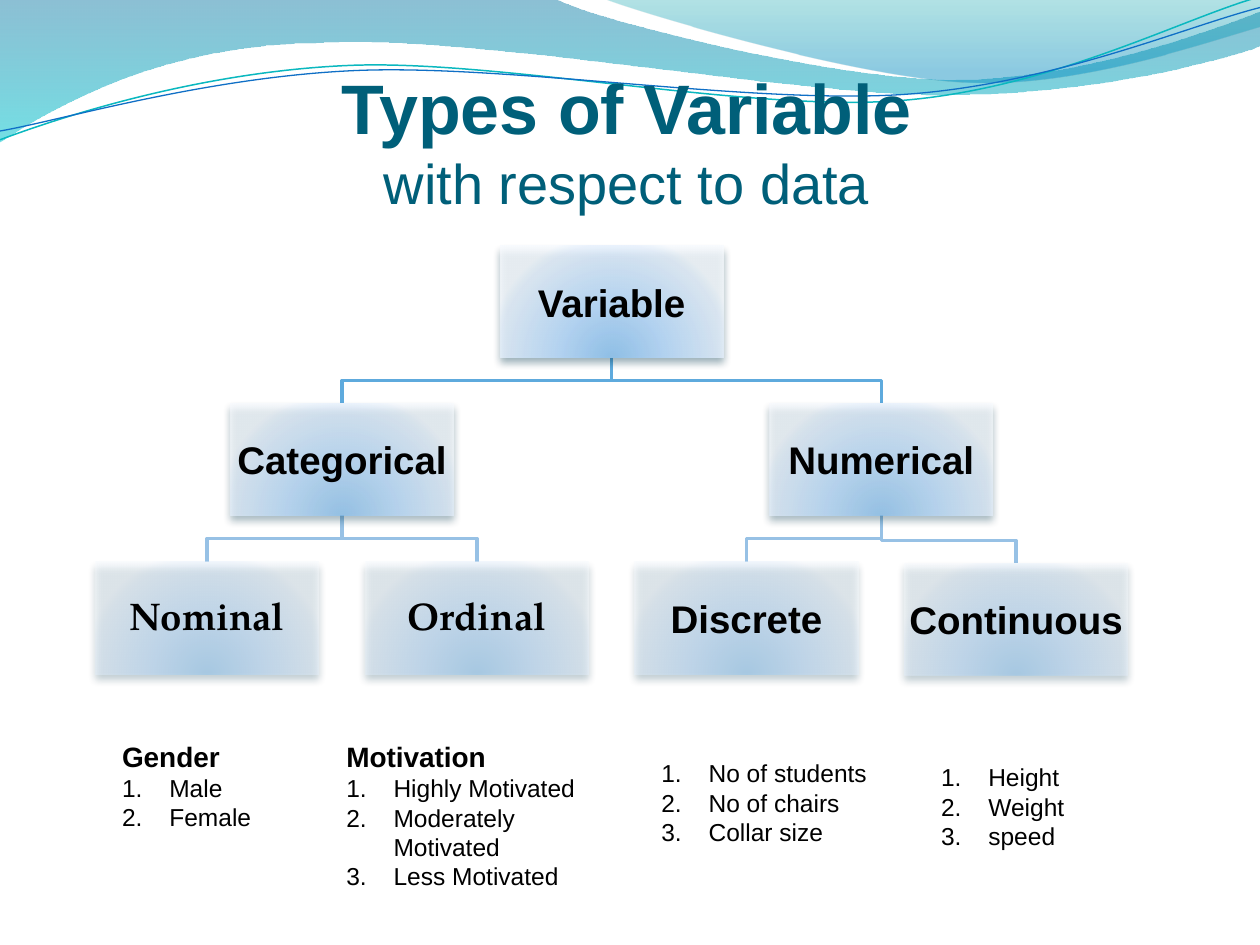
"""Build a slide showing the types of variable as a tree with examples."""
from typing import NamedTuple, Optional

from lxml.etree import Element, SubElement as Sub
from pptx import Presentation
from pptx.dml.color import RGBColor
from pptx.enum.shapes import MSO_SHAPE as SHAPE
from pptx.enum.text import MSO_ANCHOR as ANCHOR, MSO_AUTO_SIZE as AUTOSIZE, PP_ALIGN as ALIGN
from pptx.oxml.ns import qn
from pptx.util import Inches, Pt

BOX_W, BOX_H = 1.77, 0.89
COL_X, COL_STEP = 0.76, 2.14
ROW_Y = (1.95, 3.2, 4.46)
ROW_ALPHA = (80, 70, 50)
BRANCH_COLORS = ("", "5EAADD", "97C1E5")
BOX_STOPS = ((0, "8BC2F1"), (43, "B9DBFD"), (93, "EAF3FE"), (100, "F8FBFF"))
SERIF = "TeX Gyre Pagella"
INDENT = Inches(3 / 8)


class Wave(NamedTuple):
    start: tuple
    segments: list
    stops: tuple = ()
    line: str = ""
    width: float = 0


class Node(NamedTuple):
    text: str
    col: float
    row: int
    parent: Optional["Node"] = None
    font: str = "Arial"
    drop: float = 0


class Example(NamedTuple):
    box: tuple
    items: list
    heading: str = ""


WAVES = [
    Wave((0, -0.01), [(4.4, -0.01), (4.76, 0.17, 6.64, 0.63, 7.58, 0.63),
                      (8.53, 0.63, 9.58, 0.26, 10, 0.09), (10.01, 0.36),
                      (9.83, 0.44, 8.7, 0.76, 7.46, 0.75),
                      (6.22, 0.75, 3.82, 0.28, 2.57, 0.34),
                      (1.29, 0.35, 0.46, 0.83, -0.01, 1.13), (0, -0.01)],
         ((0, "0074A1", 45), (100, "00C6CF", 55))),
    Wave((4.79, -0.01), [(5.09, 0.11, 6.82, 0.62, 7.69, 0.65),
                         (8.56, 0.69, 9.61, 0.32, 10, 0.21), (10, 0), (4.79, -0.01)],
         ((0, "00A1A9", 30), (80, "008BBF", 45))),
    Wave((0, 1.11), [(0.48, 0.93, 1.58, 0.57, 2.77, 0.52), (3.95, 0.47, 5.93, 0.89, 7.13, 0.8),
                     (8.33, 0.71, 9.38, 0.15, 9.98, -0.02)], line="0AB8BF", width=0.85),
    Wave((0, 1.04), [(0.47, 0.96, 1.64, 0.61, 2.83, 0.56), (4.03, 0.51, 5.97, 0.83, 7.17, 0.75),
                     (8.36, 0.67, 9.41, 0.21, 10, 0.06)], line="0F6FC6", width=0.75),
]
ROOT = Node("Variable", 1.5, 0)
CATEGORICAL = Node("Categorical", 0.5, 1, ROOT)
NUMERICAL = Node("Numerical", 2.5, 1, ROOT)
NODES = [
    ROOT, CATEGORICAL, Node("Nominal", 0, 2, CATEGORICAL, SERIF),
    Node("Ordinal", 1, 2, CATEGORICAL, SERIF), NUMERICAL,
    Node("Discrete", 2, 2, NUMERICAL), Node("Continuous", 3, 2, NUMERICAL, drop=0.01),
]
EXAMPLES = [
    Example((0.87, 5.82, 1.49, 0.84), ["Male", "Female"], "Gender"),
    Example((2.65, 5.82, 2.26, 1.35),
            ["Highly Motivated", "Moderately Motivated", "Less Motivated"], "Motivation"),
    Example((5.15, 5.97, 2.01, 0.81), ["No of students", "No of chairs", "Collar size"]),
    Example((7.37, 6, 2.01, 1.04), ["Height", "Weight", "speed"]),
]


def set_all(target, **values) -> None:
    for name, value in values.items():
        setattr(target, name, value)


def add_run(p, text: str, size: float, bold=False, font="Arial", color="000000") -> None:
    r = p.add_run()
    r.text = text
    set_all(r.font, name=font, size=Pt(size), bold=bold)
    r.font.color.rgb = RGBColor.from_string(color)


def add_color(parent, color: str, alpha: int) -> None:
    Sub(Sub(parent, qn("a:srgbClr"), val=color), qn("a:alpha"), val=str(alpha * 1000))


def fill_gradient(sp, stops: tuple, radial=False) -> None:
    sp.fill.background()
    grad = Element(qn("a:gradFill"), rotWithShape="1")
    gs_list = Sub(grad, qn("a:gsLst"))
    for pos, color, alpha in stops:
        add_color(Sub(gs_list, qn("a:gs"), pos=str(pos * 1000)), color, alpha)
    if radial:
        Sub(Sub(grad, qn("a:path"), path="circle"), qn("a:fillToRect"),
            l="50000", t="130000", r="50000", b="-30000")
    else:
        Sub(grad, qn("a:lin"), ang="5400000", scaled="0")
    spPr = sp._element.spPr
    spPr.replace(spPr.find(qn("a:noFill")), grad)


def draw_wave(s, wave: Wave) -> None:
    points = [seg[i:i + 2] for seg in wave.segments for i in range(0, len(seg), 2)]
    builder = s.shapes.build_freeform(*map(Inches, wave.start))
    builder.add_line_segments([tuple(map(Inches, pt)) for pt in points], close=bool(wave.stops))
    sp = builder.convert_to_shape()
    outline = sp._element.spPr.find(".//" + qn("a:path"))
    steps = iter(outline.findall(qn("a:lnTo")))
    for seg in wave.segments:
        first, *others = [next(steps) for _ in range(len(seg) // 2)]
        if others:
            curve = Element(qn("a:cubicBezTo"))
            outline.replace(first, curve)
            curve.extend([step[0] for step in (first, *others)])
            for step in others:
                outline.remove(step)
    sp.shadow.inherit = False
    if wave.stops:
        fill_gradient(sp, wave.stops)
        sp.line.fill.background()
    else:
        sp.fill.background()
        sp.line.color.rgb = RGBColor.from_string(wave.line)
        sp.line.width = Pt(wave.width)


def corner(node: Node) -> tuple:
    return COL_X + COL_STEP * node.col, ROW_Y[node.row] + node.drop


def draw_branch(s, node: Node) -> None:
    (x1, y1), (x2, y2) = corner(node.parent), corner(node)
    x1, x2, y1 = x1 + BOX_W / 2, x2 + BOX_W / 2, y1 + BOX_H
    mid = (y1 + y2) / 2 + node.drop
    draw_wave(s, Wave((x1, y1), [(x1, mid), (x2, mid), (x2, y2)],
                      line=BRANCH_COLORS[node.row], width=2))


def draw_node(s, node: Node) -> None:
    box = [Inches(v) for v in (*corner(node), BOX_W, BOX_H)]
    sp = s.shapes.add_shape(SHAPE.RECTANGLE, *box)
    fill_gradient(sp, [(*stop, ROW_ALPHA[node.row]) for stop in BOX_STOPS], radial=True)
    sp.line.fill.background()
    sp.shadow.inherit = False
    shadow = Sub(sp._element.spPr.find(qn("a:effectLst")), qn("a:outerShdw"),
                 blurRad=str(Pt(4.5)), dist=str(Pt(3)), dir="5400000", rotWithShape="0")
    add_color(shadow, "00374C", 48)
    tf = s.shapes.add_textbox(*box).text_frame
    margins = {f"margin_{side}": Inches(0.02) for side in ("left", "right", "top", "bottom")}
    set_all(tf, word_wrap=True, vertical_anchor=ANCHOR.MIDDLE, **margins)
    p = tf.paragraphs[0]
    set_all(p, alignment=ALIGN.CENTER, line_spacing=0.9 if node.font == SERIF else 1.0)
    add_run(p, node.text, 22, True, node.font)


def draw_example(s, example: Example) -> None:
    tf = s.shapes.add_textbox(*map(Inches, example.box)).text_frame
    set_all(tf, word_wrap=True, auto_size=AUTOSIZE.SHAPE_TO_FIT_TEXT)
    p = tf.paragraphs[0]
    if example.heading:
        add_run(p, example.heading, 16, True)
    for item in example.items:
        p = tf.add_paragraph() if p.runs else p
        pPr = p._p.get_or_add_pPr()
        pPr.set("marL", str(INDENT))
        pPr.set("indent", str(-INDENT))
        Sub(pPr, qn("a:buAutoNum"), type="arabicPeriod")
        add_run(p, item, 14)


def draw_title(s) -> None:
    title = s.shapes.title
    set_all(title, left=Inches(0.85), top=Inches(0.46), width=Inches(8.25), height=Inches(1.31))
    tf = title.text_frame
    set_all(tf, word_wrap=True, auto_size=AUTOSIZE.NONE, vertical_anchor=ANCHOR.TOP)
    p = tf.paragraphs[0]
    p.alignment = ALIGN.CENTER
    add_run(p, "Types of Variable", 40, True, color="005F79")
    p.add_line_break()
    add_run(p, "with respect to data", 32, color="005F79")
    s.shapes._spTree.append(title._element)


prs = Presentation()
set_all(prs, slide_width=Inches(10), slide_height=Inches(7.5))
s = prs.slides.add_slide(prs.slide_layouts[5])
for draw, parts in ((draw_wave, WAVES), (draw_branch, [n for n in NODES if n.parent]),
                    (draw_node, NODES), (draw_example, EXAMPLES)):
    for part in parts:
        draw(s, part)
draw_title(s)
prs.save("out.pptx")
